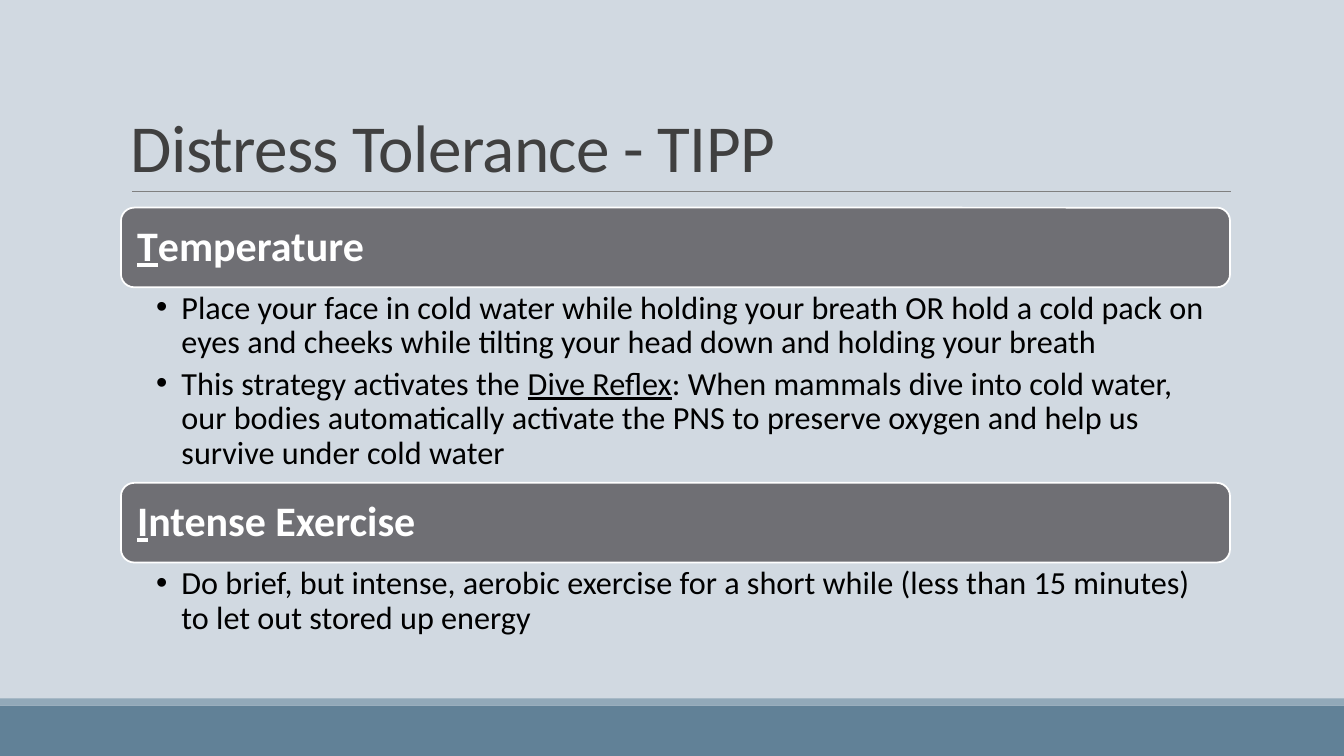
from lxml import etree
from pptx import Presentation
from pptx.dml.color import RGBColor
from pptx.enum.shapes import MSO_CONNECTOR, MSO_SHAPE
from pptx.enum.text import MSO_ANCHOR
from pptx.oxml.ns import qn
from pptx.util import Inches, Pt

RECT, ROUNDED = MSO_SHAPE.RECTANGLE, MSO_SHAPE.ROUNDED_RECTANGLE
STRAIGHT = MSO_CONNECTOR.STRAIGHT
TOP, MIDDLE, BOTTOM = MSO_ANCHOR.TOP, MSO_ANCHOR.MIDDLE, MSO_ANCHOR.BOTTOM

BACKGROUND = RGBColor(0xD1, 0xD9, 0xE1)
FOOTER = RGBColor(0x61, 0x81, 0x97)
FOOTER_EDGE = RGBColor(0x92, 0xA9, 0xB9)
RULE = RGBColor(0x80, 0x80, 0x80)
TITLE_COLOR = RGBColor(0x40, 0x40, 0x40)
BAR = RGBColor(0x6F, 0x6F, 0x74)
WHITE = RGBColor(0xFF, 0xFF, 0xFF)
BLACK = RGBColor(0, 0, 0)

# Paragraphs are lists of (text, underlined) runs.
TITLE = [("Distress Tolerance - TIPP", False)]
SECTIONS = [
    {
        "heading": [("T", True), ("emperature", False)],
        "bullets": [
            [("Place your face in cold water while holding your breath OR hold a cold pack on "
              "eyes and cheeks while tilting your head down and holding your breath", False)],
            [("This strategy activates the ", False), ("Dive Reflex", True),
             (": When mammals dive into cold water, our bodies automatically activate the PNS "
              "to preserve oxygen and help us survive under cold water", False)],
        ],
        "body_height": 1.94,
    },
    {
        "heading": [("I", True), ("ntense Exercise", False)],
        "bullets": [
            [("Do brief, but intense, aerobic exercise for a short while (less than 15 minutes) "
              "to let out stored up energy", False)],
        ],
        "body_height": 0.8,
    },
]

TITLE_FONT = {"name": "Calibri", "size": Pt(48), "color": TITLE_COLOR}
HEADING_FONT = {"name": "Calibri", "size": Pt(30), "bold": True, "color": WHITE}
BODY_FONT = {"name": "Calibri", "size": Pt(23), "color": BLACK}

SLIDE_W, SLIDE_H = 13.33, 7.5
LEFT, WIDTH = 1.2, 11
SECTIONS_TOP, BAR_H, BAR_PAD = 2.06, 0.79, 0.04
FOOTER_TOP, EDGE_H = 7, 0.07
RULE_LEFT, RULE_RIGHT, RULE_Y = 1.31, 12.21, 1.9


def add_block(slide, shape, box, fill, line=None):
    sp = slide.shapes.add_shape(shape, *map(Inches, box))
    sp.shadow.inherit = False
    sp.fill.solid()
    sp.fill.fore_color.rgb = fill
    if line is None:
        sp.line.fill.background()
    else:
        sp.line.color.rgb = line
        sp.line.width = Pt(1.25)
    return sp


def add_text(slide, box, paragraphs, font, anchor, insets, paragraph_format):
    """Add a text box; insets run left, top, right, bottom in inches."""
    tf = slide.shapes.add_textbox(*map(Inches, box)).text_frame
    tf.word_wrap = True
    tf.vertical_anchor = anchor
    for side, inset in zip(("left", "top", "right", "bottom"), insets):
        setattr(tf, f"margin_{side}", Inches(inset))
    for i, runs in enumerate(paragraphs):
        p = tf.paragraphs[0] if i == 0 else tf.add_paragraph()
        for name, value in paragraph_format.items():
            setattr(p, name, value)
        for text, underlined in runs:
            r = p.add_run()
            r.text = text
            r.font.underline = underlined
            for name, value in font.items():
                if name == "color":
                    r.font.color.rgb = value
                else:
                    setattr(r.font, name, value)
    return tf


def add_bullet(p):
    pPr = p._p.get_or_add_pPr()
    pPr.set("marL", str(Inches(0.25)))
    pPr.set("indent", str(-Inches(0.25)))
    etree.SubElement(pPr, qn("a:buFont")).set("typeface", "Arial")
    etree.SubElement(pPr, qn("a:buChar")).set("char", "•")


def add_section(slide, section, top):
    """Draw a heading bar with its bullets and return the bottom edge."""
    add_block(slide, ROUNDED, (LEFT, top, WIDTH, BAR_H), BAR, WHITE)
    heading_box = (LEFT + BAR_PAD, top + BAR_PAD, WIDTH - 2 * BAR_PAD, BAR_H - 2 * BAR_PAD)
    add_text(slide, heading_box, [section["heading"]], HEADING_FONT, MIDDLE,
             (0.12, 0.12, 0.12, 0.12), {"line_spacing": 0.9})
    body_top = top + BAR_H
    tf = add_text(slide, (LEFT, body_top, WIDTH, section["body_height"]), section["bullets"],
                  BODY_FONT, TOP, (0.35, 0.04, 0.23, 0.04),
                  {"line_spacing": 0.9, "space_after": Pt(4.6)})
    for p in tf.paragraphs:
        add_bullet(p)
    return body_top + section["body_height"]


def main():
    prs = Presentation()
    prs.slide_width, prs.slide_height = Inches(SLIDE_W), Inches(SLIDE_H)
    slide = prs.slides.add_slide(prs.slide_layouts[6])
    slide.background.fill.solid()
    slide.background.fill.fore_color.rgb = BACKGROUND

    add_block(slide, RECT, (0, FOOTER_TOP, SLIDE_W, SLIDE_H - FOOTER_TOP), FOOTER)
    add_block(slide, RECT, (0, FOOTER_TOP - EDGE_H, SLIDE_W, EDGE_H), FOOTER_EDGE)

    rule = slide.shapes.add_connector(
        STRAIGHT, *map(Inches, (RULE_LEFT, RULE_Y, RULE_RIGHT, RULE_Y)))
    rule.line.color.rgb = RULE
    rule.line.width = Pt(0.5)
    etree.SubElement(rule._element.spPr, qn("a:effectLst"))

    tf = add_text(slide, (LEFT, 0.31, WIDTH, 1.59), [TITLE], TITLE_FONT, BOTTOM,
                  (0.1, 0.05, 0.1, 0.05), {"line_spacing": 0.85})
    tf.paragraphs[0].runs[0].font._element.set("spc", "-50")

    top = SECTIONS_TOP
    for section in SECTIONS:
        top = add_section(slide, section, top)

    prs.save("out.pptx")


if __name__ == "__main__":
    main()
